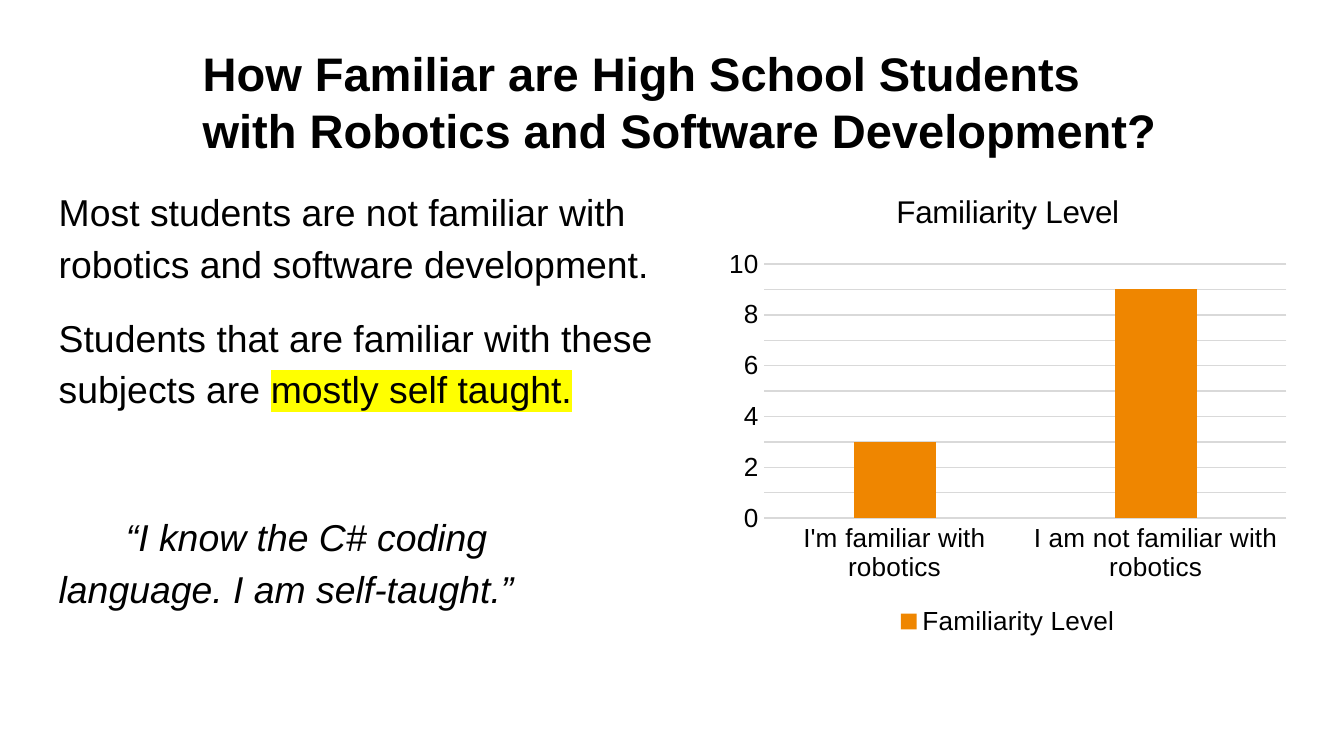
from lxml import etree
from pptx import Presentation
from pptx.chart.data import CategoryChartData
from pptx.dml.color import RGBColor
from pptx.enum import chart as ch, text
from pptx.oxml.ns import qn
from pptx.util import Cm, Pt

BLACK = RGBColor(0, 0, 0)
WHITE = RGBColor(0xFF, 0xFF, 0xFF)
ORANGE = RGBColor(0xEF, 0x86, 0x00)
GRID = RGBColor(0xD9, 0xD9, 0xD9)
YELLOW = RGBColor(0xFF, 0xFF, 0x00)
FONT = "Arial"

# Content
TITLE = ["How Familiar are High School Students",
         "with Robotics and Software Development?"]
# Each paragraph: its runs as (text, style), space before, first-line indent
BODY = [
    ([("Most students are not familiar with robotics and software development.", "")], 0, 0),
    ([("Students that are familiar with these subjects are ", ""),
      ("mostly self taught.", "highlight")], 12, 0),
    ([("“I know the C# coding language. I am self-taught.”", "italic")], 51.5, 1.27),
]
SERIES = "Familiarity Level"
LEVELS = {"I'm familiar with robotics": 3, "I am not familiar with robotics": 9}


def set_font(font, size, **extra):
    for name, value in {"name": FONT, "size": Pt(size), **extra}.items():
        setattr(font, name, value)
    font.color.rgb = BLACK


def set_frame(tf, anchor):
    margins = dict.fromkeys(
        ("margin_left", "margin_top", "margin_right", "margin_bottom"), Cm(0.25))
    for name, value in {**margins, "word_wrap": True, "vertical_anchor": anchor,
                        "auto_size": text.MSO_AUTO_SIZE.NONE}.items():
        setattr(tf, name, value)


def highlight(r, color):
    mark = etree.Element(qn("a:highlight"))
    etree.SubElement(mark, qn("a:srgbClr")).set("val", str(color))
    r.font.fill._xPr.find(qn("a:solidFill")).addnext(mark)


prs = Presentation()
prs.slide_width, prs.slide_height = Cm(25.4), Cm(14.28)
s = prs.slides.add_slide(prs.slide_layouts[5])
s.background.fill.solid()
s.background.fill.fore_color.rgb = WHITE

# Title
sp = s.shapes.title
sp.left, sp.top, sp.width, sp.height = Cm(3.58), Cm(0.56), Cm(20.96), Cm(2.67)
tf = sp.text_frame
set_frame(tf, text.MSO_ANCHOR.BOTTOM)
for i, line in enumerate(TITLE):
    p = tf.paragraphs[0] if i == 0 else tf.add_paragraph()
    p.alignment = text.PP_ALIGN.LEFT
    r = p.add_run()
    r.text = line
    set_font(r.font, 25.2, bold=True)

# Findings and quote
tf = s.shapes.add_textbox(Cm(0.86), Cm(3.2), Cm(11.84), Cm(9.5)).text_frame
set_frame(tf, text.MSO_ANCHOR.TOP)
for i, (runs, before, indent) in enumerate(BODY):
    p = tf.paragraphs[0] if i == 0 else tf.add_paragraph()
    p.line_spacing, p.space_before = 1.15, Pt(before)
    if indent:
        p._p.get_or_add_pPr().set("indent", str(Cm(indent)))
    for words, style in runs:
        r = p.add_run()
        r.text = words
        set_font(r.font, 20, italic=style == "italic")
        if style == "highlight":
            highlight(r, YELLOW)

# Familiarity chart
data = CategoryChartData()
data.categories = list(LEVELS)
data.add_series(SERIES, list(LEVELS.values()))
chart = s.shapes.add_chart(ch.XL_CHART_TYPE.COLUMN_CLUSTERED, Cm(13.56), Cm(3.2),
                           Cm(10.97), Cm(8.92), data).chart
set_font(chart.font, 14)
chart.has_title = True
chart.chart_title.text_frame.text = SERIES
set_font(chart.chart_title.text_frame.paragraphs[0].runs[0].font, 16.8, bold=False)
chart.has_legend = True
chart.legend.position = ch.XL_LEGEND_POSITION.BOTTOM
chart.legend.include_in_layout = False
set_font(chart.legend.font, 14)

plot = chart.plots[0]
plot.gap_width, plot.overlap, plot.vary_by_categories = 219, -27, False
fill = plot.series[0].format.fill
fill.solid()
fill.fore_color.rgb = ORANGE

cat_axis, val_axis = chart.category_axis, chart.value_axis
for axis in (cat_axis, val_axis):
    axis.major_tick_mark = axis.minor_tick_mark = ch.XL_TICK_MARK.NONE
    set_font(axis.tick_labels.font, 14)
val_axis.minimum_scale, val_axis.maximum_scale, val_axis.major_unit = 0, 10, 1
val_axis.format.line.fill.background()
for line in (cat_axis.format.line, val_axis.major_gridlines.format.line):
    line.color.rgb = GRID
    line.width = Pt(0.75)

prs.save("out.pptx")
